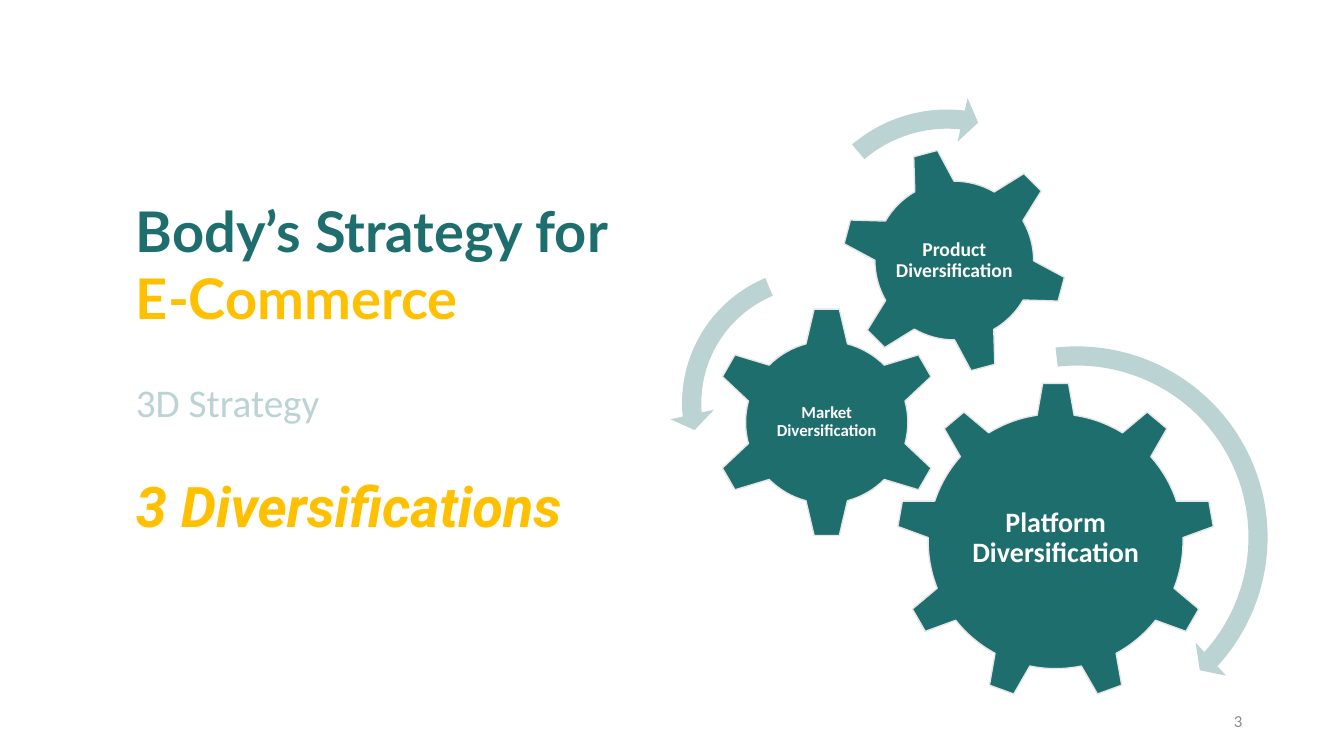
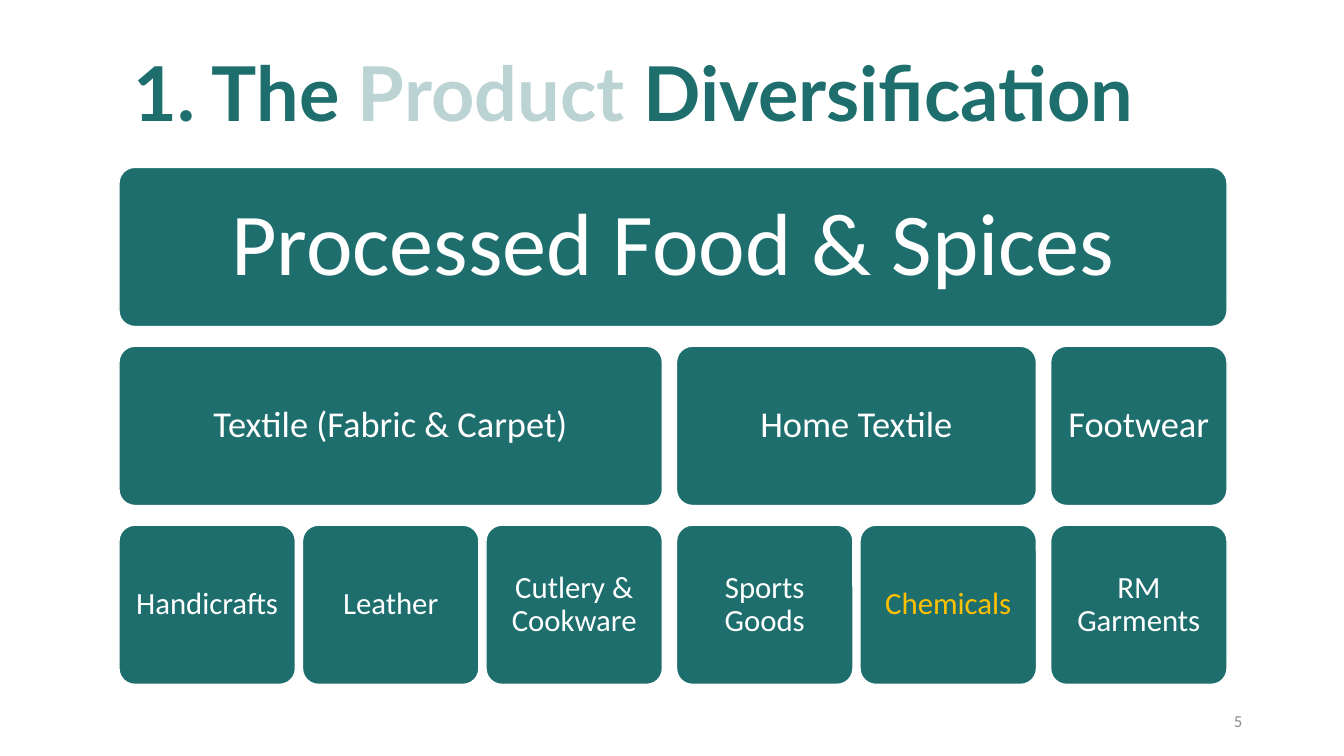
from pptx import Presentation
from pptx.dml.color import RGBColor
from pptx.enum.shapes import MSO_SHAPE
from pptx.enum.text import MSO_ANCHOR, PP_ALIGN
from pptx.util import Inches, Pt

ROUNDED = MSO_SHAPE.ROUNDED_RECTANGLE
GEAR_SIX, GEAR_NINE = MSO_SHAPE.GEAR_6, MSO_SHAPE.GEAR_9
ARC_RIGHT, ARC_LEFT = MSO_SHAPE.CIRCULAR_ARROW, MSO_SHAPE.LEFT_CIRCULAR_ARROW
LEFT, CENTER, RIGHT = PP_ALIGN.LEFT, PP_ALIGN.CENTER, PP_ALIGN.RIGHT
TOP, MIDDLE = MSO_ANCHOR.TOP, MSO_ANCHOR.MIDDLE

COLORS = {
    "teal": "1E6E6E",
    "mist": "BBD3D3",
    "gold": "FFC000",
    "white": "FFFFFF",
    "edge": "E7E6E6",
    "gray": "8C8C8C",
}
TITLE_FONT, BODY_FONT, ACCENT_FONT = "Lato", "Calibri", "Roboto"


def color(name):
    return RGBColor.from_string(COLORS[name])


def style_font(font, name, size, color_name, bold=False, italic=False):
    font.name = name
    font.size = Pt(size)
    font.color.rgb = color(color_name)
    font.bold = bold
    font.italic = italic


def prepare_frame(shape, anchor, inset=None):
    frame = shape.text_frame
    frame.word_wrap = True
    frame.vertical_anchor = anchor
    if inset is not None:
        frame.margin_left = frame.margin_right = Inches(inset)
        frame.margin_top = frame.margin_bottom = Inches(inset)
    return frame


def add_text_box(slide, box, anchor=TOP, inset=None):
    shape = slide.shapes.add_textbox(*map(Inches, box))
    return prepare_frame(shape, anchor, inset)


def add_filled_shape(slide, kind, box, fill, line=None):
    shape = slide.shapes.add_shape(kind, *map(Inches, box))
    shape.shadow.inherit = False
    shape.fill.solid()
    shape.fill.fore_color.rgb = color(fill)
    if line:
        shape.line.color.rgb = color(line)
        shape.line.width = Pt(1)
    else:
        shape.line.fill.background()
    return shape


def write_label(frame, text, size, color_name="white", bold=False):
    paragraph = frame.paragraphs[0]
    paragraph.text = text
    paragraph.alignment = CENTER
    paragraph.line_spacing = 0.9
    style_font(paragraph.font, BODY_FONT, size, color_name, bold)


def add_page_number(slide, number):
    frame = add_text_box(slide, (9.42, 6.95, 3, 0.4), MIDDLE)
    paragraph = frame.paragraphs[0]
    paragraph.text = str(number)
    paragraph.alignment = RIGHT
    style_font(paragraph.font, BODY_FONT, 12, "gray")


def add_slide(presentation, number):
    slide = presentation.slides.add_slide(presentation.slide_layouts[6])
    add_page_number(slide, number)
    return slide


def add_strategy_text(slide, box):
    frame = add_text_box(slide, box)
    lines = [
        ("Body’s Strategy for", TITLE_FONT, 40, "teal", True, False, 0),
        ("E-Commerce", TITLE_FONT, 40, "gold", True, False, 0),
        ("3D Strategy", BODY_FONT, 28, "mist", False, False, 34),
        ("3 Diversifications", ACCENT_FONT, 40, "gold", True, True, 33),
    ]
    for index, (text, font, size, color_name, bold, italic, before) in enumerate(lines):
        paragraph = frame.add_paragraph() if index else frame.paragraphs[0]
        paragraph.text = text
        paragraph.alignment = LEFT
        paragraph.space_before = Pt(before)
        style_font(paragraph.font, font, size, color_name, bold, italic)


def add_gear(slide, kind, left, top, size, label, label_size, label_width, lift=0, rotation=0):
    gear = add_filled_shape(slide, kind, (left, top, size, size), "teal", "edge")
    gear.rotation = rotation
    margin = (size - label_width) / 2
    label_box = (left + margin, top + margin - lift, label_width, label_width)
    frame = add_text_box(slide, label_box, MIDDLE, 0.02)
    write_label(frame, label, label_size, bold=True)


def add_arc(slide, kind, left, top, size, thickness, head_angle, end, start, head_width, rotation=0):
    arc = add_filled_shape(slide, kind, (left, top, size, size), "mist")
    arc.rotation = rotation
    angles = [angle * 0.6 for angle in (head_angle, end, start)]
    for index, value in enumerate([thickness, *angles, head_width]):
        arc.adjustments[index] = value


def add_gear_train(slide, box):
    left, top = box
    gears = [
        (GEAR_NINE, 2.25, 2.83, 3.16, "Platform Diversification", 20, 1.89, 0.03, 0),
        (GEAR_SIX, 0.41, 2.08, 2.3, "Market Diversification", 12, 1.14, 0, 0),
        (GEAR_SIX, 1.7, 0.5, 2.25, "Product Diversification", 14, 1.26, 0, 345),
    ]
    arcs = [
        (ARC_RIGHT, 2.02, 2.35, 4.04, 0.047, 4.98, 42.28, 263.63, 0.055, 0),
        (ARC_LEFT, 0, 1.57, 2.94, 0.065, 7.17, 174.82, 247.3, 0.075, 0),
        (ARC_RIGHT, 1.17, 0, 3.17, 0.06, 6.57, 221.9, 175.14, 0.07, 54.5),
    ]
    for add_part, parts in ((add_gear, gears), (add_arc, arcs)):
        for kind, across, down, *details in parts:
            add_part(slide, kind, left + across, top + down, *details)


def add_product_title(slide, box):
    paragraph = add_text_box(slide, box).paragraphs[0]
    paragraph.alignment = CENTER
    pieces = [("1. The ", "teal"), ("Product", "mist"), (" Diversification", "teal")]
    for text, color_name in pieces:
        run = paragraph.add_run()
        run.text = text
        style_font(run.font, TITLE_FONT, 54, color_name, True)


def add_product_grid(slide, box):
    left, top, width, height = box
    card_height, column_gap, group_gap = 1.58, 0.07, 0.07
    column_groups = [0, 0, 0, 1, 1, 2]
    card_width = (width - 5 * column_gap - 2 * group_gap) / 6
    row_gap = (height - 3 * card_height) / 2
    lefts = [
        left + column * (card_width + column_gap) + group * group_gap
        for column, group in enumerate(column_groups)
    ]
    rows = [
        (63, 0.26, [("Processed Food & Spices", 0, 5)]),
        (26, 0.11, [
            ("Textile (Fabric & Carpet)", 0, 2),
            ("Home Textile", 3, 4),
            ("Footwear", 5, 5),
        ]),
        (22, 0.09, [
            (product, column, column)
            for column, product in enumerate([
                "Handicrafts", "Leather", "Cutlery & Cookware",
                "Sports Goods", "Chemicals", "RM Garments",
            ])
        ]),
    ]
    for row, (size, inset, cards) in enumerate(rows):
        card_top = top + row * (card_height + row_gap)
        for product, first, last in cards:
            span = lefts[last] + card_width - lefts[first]
            card_box = (lefts[first], card_top, span, card_height)
            card = add_filled_shape(slide, ROUNDED, card_box, "teal", "white")
            card.adjustments[0] = 0.1
            text_color = "gold" if product == "Chemicals" else "white"
            write_label(prepare_frame(card, MIDDLE, inset), product, size, text_color)


def build_strategy_slide(presentation):
    slide = add_slide(presentation, 3)
    add_strategy_text(slide, (1.25, 1.9, 9.87, 3.53))
    add_gear_train(slide, (6.64, 0.96))


def build_product_slide(presentation):
    slide = add_slide(presentation, 5)
    add_product_title(slide, (0.52, 0.41, 11.53, 1.01))
    add_product_grid(slide, (1.18, 1.66, 10.99, 5.13))


def main():
    presentation = Presentation()
    presentation.slide_width = Inches(13.33)
    presentation.slide_height = Inches(7.5)
    build_strategy_slide(presentation)
    build_product_slide(presentation)
    presentation.save("out.pptx")


if __name__ == "__main__":
    main()
